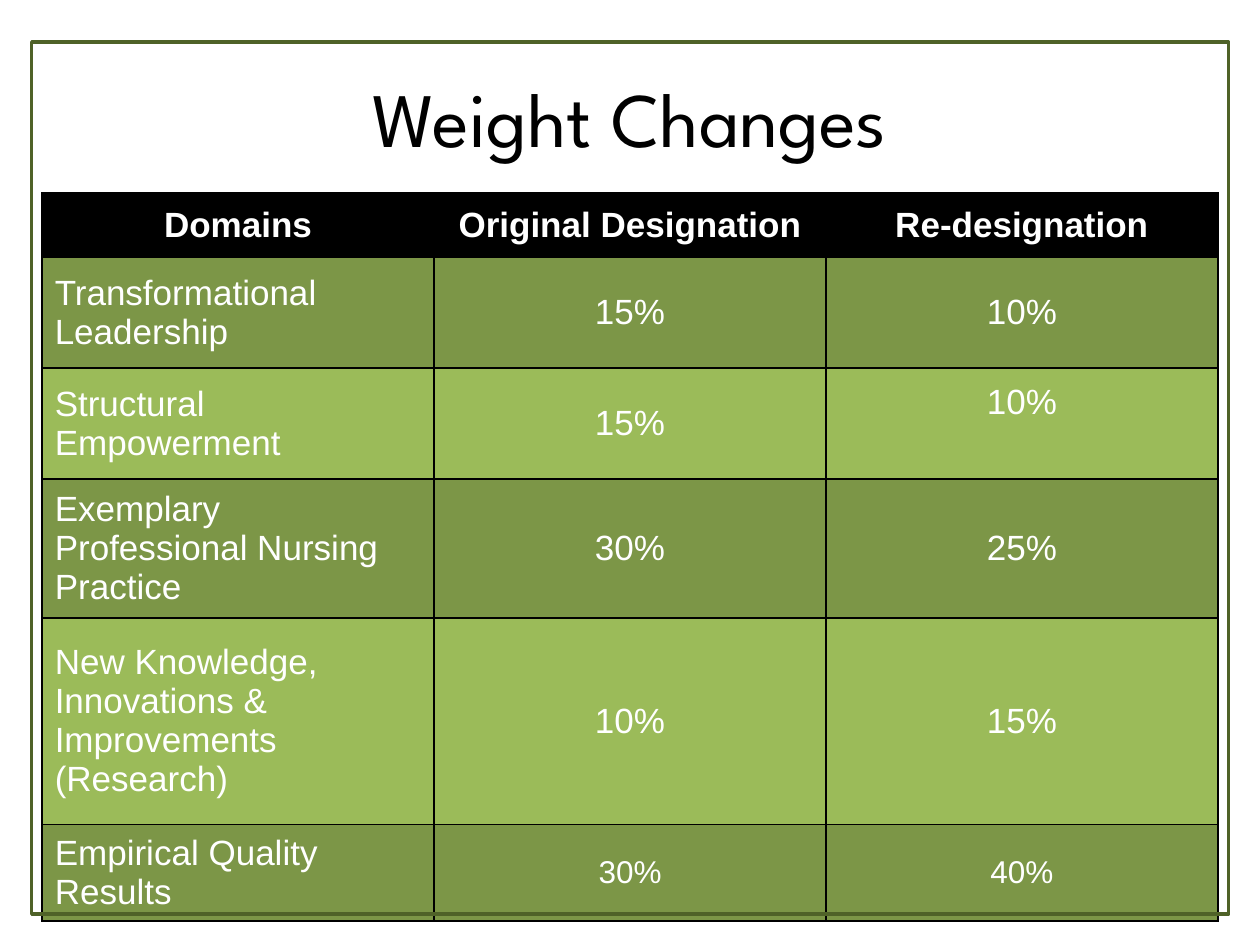
from lxml.etree import SubElement
from pptx import Presentation
from pptx.dml.color import RGBColor
from pptx.enum.shapes import MSO_SHAPE as Shape
from pptx.enum.text import MSO_ANCHOR as Anchor, PP_ALIGN as Align
from pptx.oxml.ns import qn
from pptx.util import Cm, Pt

BLACK = RGBColor(0x00, 0x00, 0x00)
WHITE = RGBColor(0xFF, 0xFF, 0xFF)
DARK_GREEN = RGBColor(0x4F, 0x62, 0x28)
OLIVE = RGBColor(0x7C, 0x96, 0x47)
LIGHT_GREEN = RGBColor(0x9B, 0xBB, 0x59)

HEADINGS = ("Domains", "Original Designation", "Re-designation")
WEIGHTS = (
    ("Transformational\nLeadership", "15%", "10%"),
    ("Structural Empowerment", "15%", "10%"),
    ("Exemplary Professional Nursing Practice", "30%", "25%"),
    ("New Knowledge, Innovations & Improvements (Research)", "10%", "15%"),
    ("Empirical Quality Results", "30%", "40%"),
)
ROW_HEIGHTS = (1.29, 2.24, 2.24, 2.24, 4.16, 1.29)
COLUMN_WIDTH = 7.9


def write(frame, text, font="Arial", size=20, color=WHITE, bold=False, align=Align.CENTER):
    frame.word_wrap = True
    frame.text = text
    for paragraph in frame.paragraphs:
        paragraph.alignment = align
        for run in paragraph.runs:
            run.font.name = font
            run.font.size = Pt(size)
            run.font.bold = bold
            run.font.color.rgb = color


def add_borders(cell, color, width):
    properties = cell._tc.get_or_add_tcPr()
    for position, side in enumerate(("lnL", "lnR", "lnT", "lnB")):
        line = SubElement(properties, qn(f"a:{side}"), w=str(Pt(width)))
        fill = SubElement(line, qn("a:solidFill"))
        SubElement(fill, qn("a:srgbClr"), val=str(color))
        properties.insert(position, line)


class SlideBuilder:
    def __init__(self, slide):
        self.slide = slide
        self.title_font = "League Spartan"
        self.border_color = BLACK
        self.frame_color = DARK_GREEN
        self.bands = (OLIVE, LIGHT_GREEN)

    def title(self, text, left, top, width, height):
        shape = self.slide.shapes.add_textbox(Cm(left), Cm(top), Cm(width), Cm(height))
        shape.text_frame.vertical_anchor = Anchor.MIDDLE
        write(shape.text_frame, text, font=self.title_font, size=44, color=BLACK)

    def cell(self, cell, text, fill, **style):
        cell.fill.solid()
        cell.fill.fore_color.rgb = fill
        cell.vertical_anchor = Anchor.MIDDLE
        write(cell.text_frame, text, **style)
        add_borders(cell, self.border_color, 1)

    def table(self, headings, rows, left, top, column_width, row_heights):
        table = self.slide.shapes.add_table(
            len(row_heights), len(headings), Cm(left), Cm(top),
            Cm(column_width * len(headings)), Cm(sum(row_heights)),
        ).table
        for column in table.columns:
            column.width = Cm(column_width)
        for row, height in zip(table.rows, row_heights):
            row.height = Cm(height)
        for column, heading in enumerate(headings):
            self.cell(table.cell(0, column), heading, BLACK, bold=True)
        for index, values in enumerate(rows):
            for column, value in enumerate(values):
                self.cell(
                    table.cell(index + 1, column), value, self.bands[index % 2],
                    size=18 if column and index == len(rows) - 1 else 20,
                    align=Align.CENTER if column else Align.LEFT,
                )
        return table

    def frame(self, left, top, width, height):
        shape = self.slide.shapes.add_shape(
            Shape.RECTANGLE, Cm(left), Cm(top), Cm(width), Cm(height))
        shape.shadow.inherit = False
        shape.fill.background()
        shape.line.color.rgb = self.frame_color
        shape.line.width = Pt(2)


def main():
    presentation = Presentation()
    presentation.slide_width = Cm(25.4)
    presentation.slide_height = Cm(19.05)
    builder = SlideBuilder(presentation.slides.add_slide(presentation.slide_layouts[6]))
    builder.title("Weight Changes", 1.27, 0.76, 22.86, 3.18)
    table = builder.table(HEADINGS, WEIGHTS, 0.85, 3.89, COLUMN_WIDTH, ROW_HEIGHTS)
    table.cell(2, 2).margin_bottom = Cm(1)
    builder.frame(0.64, 0.85, 24.13, 17.58)
    presentation.save("out.pptx")


if __name__ == "__main__":
    main()
